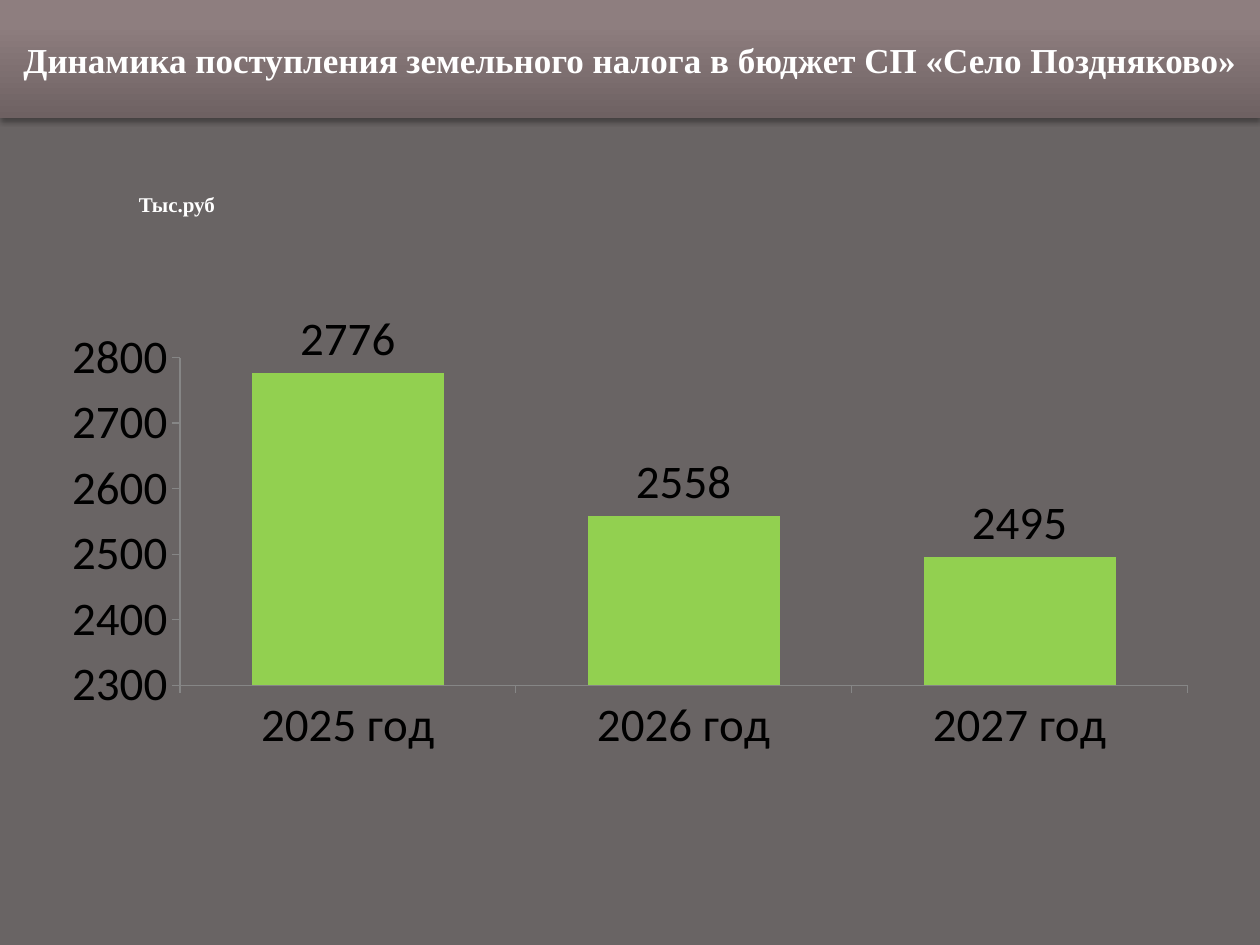
"""Build a slide charting land tax revenue by year."""
from dataclasses import dataclass

from lxml import etree
from pptx import Presentation
from pptx import util as u
from pptx.chart import data
from pptx.dml import color
from pptx.enum import chart as charts, text
from pptx.oxml import ns, parse_xml


@dataclass(frozen=True)
class Theme:
    background: str = "696464"
    banner: tuple = ((0, "6E6162"), (80, "8E7E7F"), (100, "8F7E80"))
    light: str = "FFFFFF"
    dark: str = "000000"
    axis: str = "868686"
    bar: str = "92D050"
    text_font: str = "Times New Roman"
    chart_font: str = "Calibri"
    title_size: float = 20
    note_size: float = 12
    chart_size: float = 26.9


def px(length):
    return u.Emu(round(length * 914400 / 126))


def rgb(value):
    return color.RGBColor.from_string(value)


class SlideBuilder:
    def __init__(self, deck, theme):
        self.theme = theme
        self.slide = deck.slides.add_slide(deck.slide_layouts[5])
        fill = self.slide.background.fill
        fill.solid()
        fill.fore_color.rgb = rgb(theme.background)

    def style_font(self, font, name, size, tint, bold=False):
        font.name, font.size, font.bold = name, u.Pt(size), bold
        font.color.rgb = rgb(tint)

    def set_text(self, box, wording, size):
        frame = box.text_frame
        frame.word_wrap = True
        frame.vertical_anchor = text.MSO_ANCHOR.MIDDLE
        frame.margin_left = frame.margin_right = 0
        para = frame.paragraphs[0]
        para.text = wording
        para.alignment = text.PP_ALIGN.CENTER
        self.style_font(para.font, self.theme.text_font, size, self.theme.light, True)

    def title(self, wording, left, top, width, height):
        box = self.slide.shapes.title
        box.left, box.top, box.width, box.height = map(px, (left, top, width, height))
        self.set_text(box, wording, self.theme.title_size)
        box.text_frame.auto_size = text.MSO_AUTO_SIZE.NONE
        stops = "".join(
            f'<a:gs pos="{place * 1000}"><a:srgbClr val="{tint}"/></a:gs>'
            for place, tint in self.theme.banner
        )
        properties = box.element.spPr
        properties.append(parse_xml(
            f'<a:gradFill {ns.nsdecls("a")}><a:gsLst>{stops}</a:gsLst>'
            '<a:lin ang="16200000" scaled="0"/></a:gradFill>'
        ))
        properties.append(parse_xml(
            f'<a:effectLst {ns.nsdecls("a")}>'
            '<a:outerShdw blurRad="40000" dist="23000" dir="5400000" rotWithShape="0">'
            f'<a:srgbClr val="{self.theme.dark}"><a:alpha val="35000"/></a:srgbClr>'
            '</a:outerShdw></a:effectLst>'
        ))

    def note(self, wording, left, top, width, height):
        box = self.slide.shapes.add_textbox(*map(px, (left, top, width, height)))
        self.set_text(box, wording, self.theme.note_size)

    def columns(self, values, bounds, step, plot_area, left, top, width, height):
        source = data.CategoryChartData(number_format="0")
        source.categories = list(values)
        source.add_series("Земельный налог", list(values.values()))
        chart = self.slide.shapes.add_chart(
            charts.XL_CHART_TYPE.COLUMN_CLUSTERED,
            *map(px, (left, top, width, height)), source,
        ).chart
        chart.has_title = chart.has_legend = False
        self.style_font(chart.font, self.theme.chart_font,
                        self.theme.chart_size, self.theme.dark)
        for axis in (chart.category_axis, chart.value_axis):
            axis.has_major_gridlines = False
            axis.major_tick_mark = charts.XL_TICK_MARK.OUTSIDE
            axis.minor_tick_mark = charts.XL_TICK_MARK.NONE
            axis.format.line.color.rgb = rgb(self.theme.axis)
            axis.format.line.width = u.Pt(0.75)
        chart.category_axis.tick_label_position = charts.XL_TICK_LABEL_POSITION.LOW
        scale = chart.value_axis
        scale.minimum_scale, scale.maximum_scale = bounds
        scale.major_unit = step
        plot = chart.plots[0]
        plot.gap_width = 75
        plot.vary_by_categories = False
        fill = plot.series[0].format.fill
        fill.solid()
        fill.fore_color.rgb = rgb(self.theme.bar)
        plot.has_data_labels = True
        plot.data_labels.show_value = True
        plot.data_labels.position = charts.XL_LABEL_POSITION.OUTSIDE_END
        self.place_plot(chart, plot_area)

    def place_plot(self, chart, plot_area):
        area = chart.element.find(".//" + ns.qn("c:plotArea"))
        for old in area.findall(ns.qn("c:layout")):
            area.remove(old)
        layout = parse_xml(f'<c:layout {ns.nsdecls("c")}><c:manualLayout/></c:layout>')
        settings = {"layoutTarget": "inner", "xMode": "edge", "yMode": "edge",
                    **dict(zip("xywh", plot_area))}
        for name, value in settings.items():
            etree.SubElement(layout[0], ns.qn("c:" + name), val=str(value))
        area.insert(0, layout)


def main():
    deck = Presentation()
    deck.slide_width, deck.slide_height = px(1260), px(945)
    page = SlideBuilder(deck, Theme())
    page.title("Динамика поступления земельного налога в бюджет СП «Село Поздняково»",
               0, 0, 1260, 118)
    revenue = {"2025 год": 2776, "2026 год": 2558, "2027 год": 2495}
    page.columns(revenue, (2300, 2800), 100, (0.09, 0.09, 0.87, 0.69),
                 72, 311, 1162, 479)
    page.note("Тыс.руб", 84, 185, 186, 38)
    deck.save("out.pptx")


if __name__ == "__main__":
    main()
